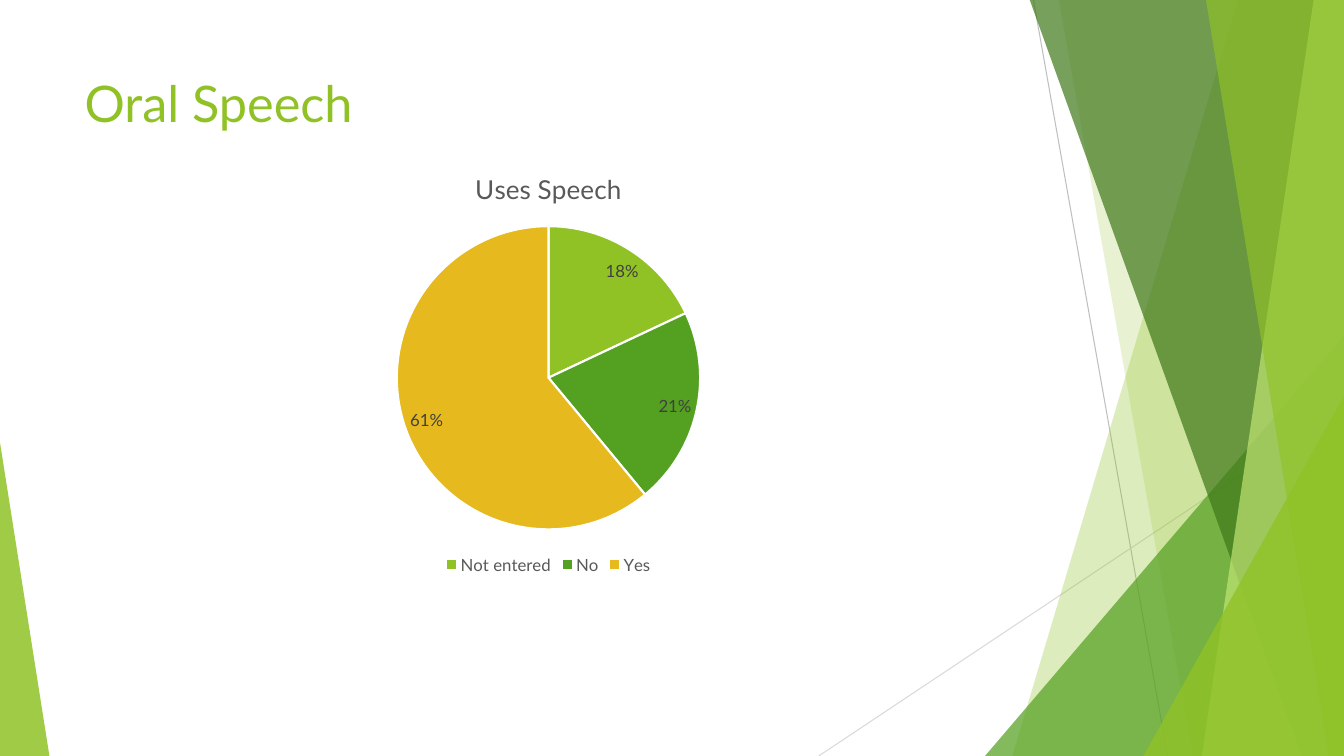
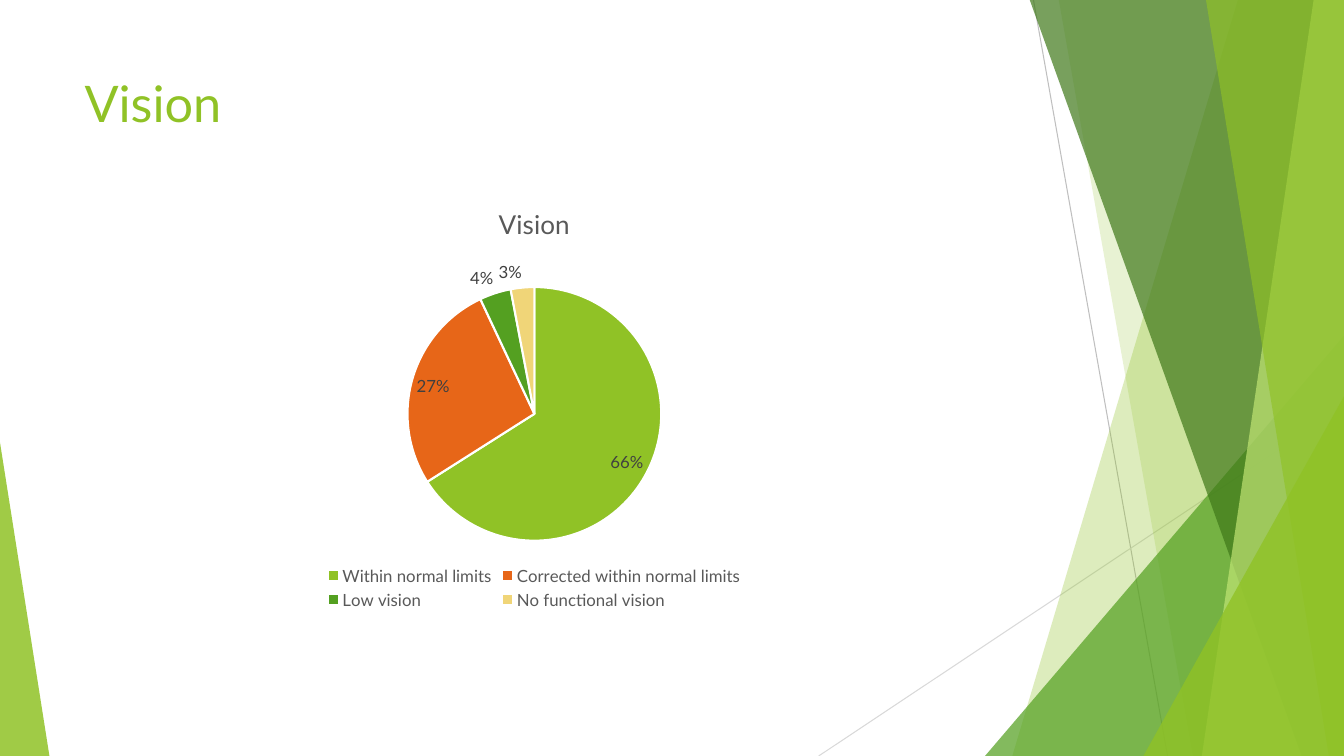
"""Build two slides of survey pie charts over a shared backdrop of green bands."""
from dataclasses import dataclass

from lxml import etree
from pptx import Presentation
from pptx.chart.data import CategoryChartData
from pptx.dml.color import RGBColor
from pptx.enum.chart import XL_CHART_TYPE, XL_LABEL_POSITION, XL_LEGEND_POSITION
from pptx.enum.shapes import MSO_CONNECTOR, MSO_SHAPE
from pptx.oxml.ns import qn
from pptx.util import Emu, Pt

PIE = XL_CHART_TYPE.PIE
BEST = XL_LABEL_POSITION.BEST_FIT
BOTTOM = XL_LEGEND_POSITION.BOTTOM
STRAIGHT = MSO_CONNECTOR.STRAIGHT
TRIANGLE = MSO_SHAPE.ISOSCELES_TRIANGLE

SCALE = 9144
WIDTH, HEIGHT = 1333, 750
FONT = "Lato"
LIME, GREEN, GOLD = "90C226", "54A021", "E6B91E"
ORANGE, SAND, WHITE = "E76618", "F0D578", "FFFFFF"
GREY, DARK = "595959", "404040"


@dataclass(frozen=True)
class Line:
    start: tuple[int, int]
    end: tuple[int, int]
    color: str


@dataclass(frozen=True)
class Band:
    top: int
    foot: int
    color: str
    alpha: int


@dataclass(frozen=True)
class Wedge:
    left: int
    top: int
    width: int
    peak: int
    color: str
    alpha: int


@dataclass(frozen=True)
class Slice:
    label: str
    value: int
    color: str


@dataclass(frozen=True)
class Page:
    title: str
    topic: str
    left: int
    top: int
    slices: tuple[Slice, ...]


LINES = (
    Line((1025, 0), (1158, HEIGHT), "BFBFBF"),
    Line((WIDTH, 403), (812, HEIGHT), "D9D9D9"),
)
PANES = (
    Band(1228, 1004, LIME, 30),
    Band(1050, 1183, LIME, 20),
    Wedge(977, 333, 356, 1, GREEN, 72),
    Band(1021, 1291, "3F7819", 70),
    Band(1303, 1192, "C0E474", 70),
    Band(1196, 1318, LIME, 65),
    Wedge(1134, 393, 199, 1, LIME, 80),
    Wedge(0, 439, 49, 0, LIME, 85),
)
PAGES = (
    Page("Oral Speech", "Uses Speech", 74, 150, (
        Slice("Not entered", 18, LIME),
        Slice("No", 21, GREEN),
        Slice("Yes", 61, GOLD),
    )),
    Page("Vision", "Vision", 60, 185, (
        Slice("Within normal limits", 66, LIME),
        Slice("Corrected within normal limits", 27, ORANGE),
        Slice("Low vision", 4, GREEN),
        Slice("No functional vision", 3, SAND),
    )),
)


def px(*sizes: int) -> list[Emu]:
    return [Emu(size * SCALE) for size in sizes]


def rgb(code: str) -> RGBColor:
    return RGBColor.from_string(code)


def style(font, size: float, color: str) -> None:
    font.name = FONT
    font.size = Pt(size)
    font.color.rgb = rgb(color)


def draw_line(slide, line: Line) -> None:
    link = slide.shapes.add_connector(STRAIGHT, *px(*line.start, *line.end))
    link.line.color.rgb = rgb(line.color)
    link.line.width = Pt(0.75)
    etree.SubElement(link.element.spPr, qn("a:effectLst"))


def draw_pane(slide, pane: Band | Wedge) -> None:
    if isinstance(pane, Band):
        pen = slide.shapes.build_freeform(pane.top, -1, SCALE)
        pen.add_line_segments([(WIDTH, -1), (WIDTH, HEIGHT), (pane.foot, HEIGHT)])
        shape = pen.convert_to_shape()
    else:
        box = px(pane.left, pane.top, pane.width, HEIGHT - pane.top)
        shape = slide.shapes.add_shape(TRIANGLE, *box)
        shape.adjustments[0] = pane.peak
    shape.shadow.inherit = False
    shape.fill.solid()
    shape.fill.fore_color.rgb = rgb(pane.color)
    tint = shape.element.spPr.find(qn("a:solidFill"))[0]
    etree.SubElement(tint, qn("a:alpha"), val=str(pane.alpha * 1000))
    shape.line.fill.background()


def add_title(slide, text: str) -> None:
    frame = slide.shapes.add_textbox(*px(74, 67, 940, 144)).text_frame
    frame.word_wrap = True
    run = frame.paragraphs[0].add_run()
    run.text = text
    style(run.font, 36, LIME)


def add_pie(slide, page: Page) -> None:
    data = CategoryChartData()
    data.categories = [part.label for part in page.slices]
    data.add_series(page.topic, [part.value for part in page.slices])
    box = px(page.left, page.top, 940, 424)
    chart = slide.shapes.add_chart(PIE, *box, data).chart
    style(chart.font, 10, "000000")

    chart.has_title = True
    run = chart.chart_title.text_frame.paragraphs[0].add_run()
    run.text = page.topic
    style(run.font, 18.6, GREY)
    run.font.bold = False

    chart.has_legend = True
    chart.legend.position = BOTTOM
    chart.legend.include_in_layout = False
    style(chart.legend.font, 12, GREY)

    plot = chart.plots[0]
    plot.vary_by_categories = True
    for index, part in enumerate(page.slices):
        look = plot.series[0].points[index].format
        look.fill.solid()
        look.fill.fore_color.rgb = rgb(part.color)
        look.line.color.rgb = rgb(WHITE)
        look.line.width = Pt(1.5)

    plot.has_data_labels = True
    labels = plot.data_labels
    labels.show_value = False
    labels.show_percentage = True
    labels.number_format = "0%"
    labels.number_format_is_linked = False
    labels.position = BEST
    style(labels.font, 12, DARK)


def main() -> None:
    deck = Presentation()
    deck.slide_width, deck.slide_height = px(WIDTH, HEIGHT)
    for page in PAGES:
        slide = deck.slides.add_slide(deck.slide_layouts[6])
        for line in LINES:
            draw_line(slide, line)
        for pane in PANES:
            draw_pane(slide, pane)
        add_title(slide, page.title)
        add_pie(slide, page)
    deck.save("out.pptx")


if __name__ == "__main__":
    main()
